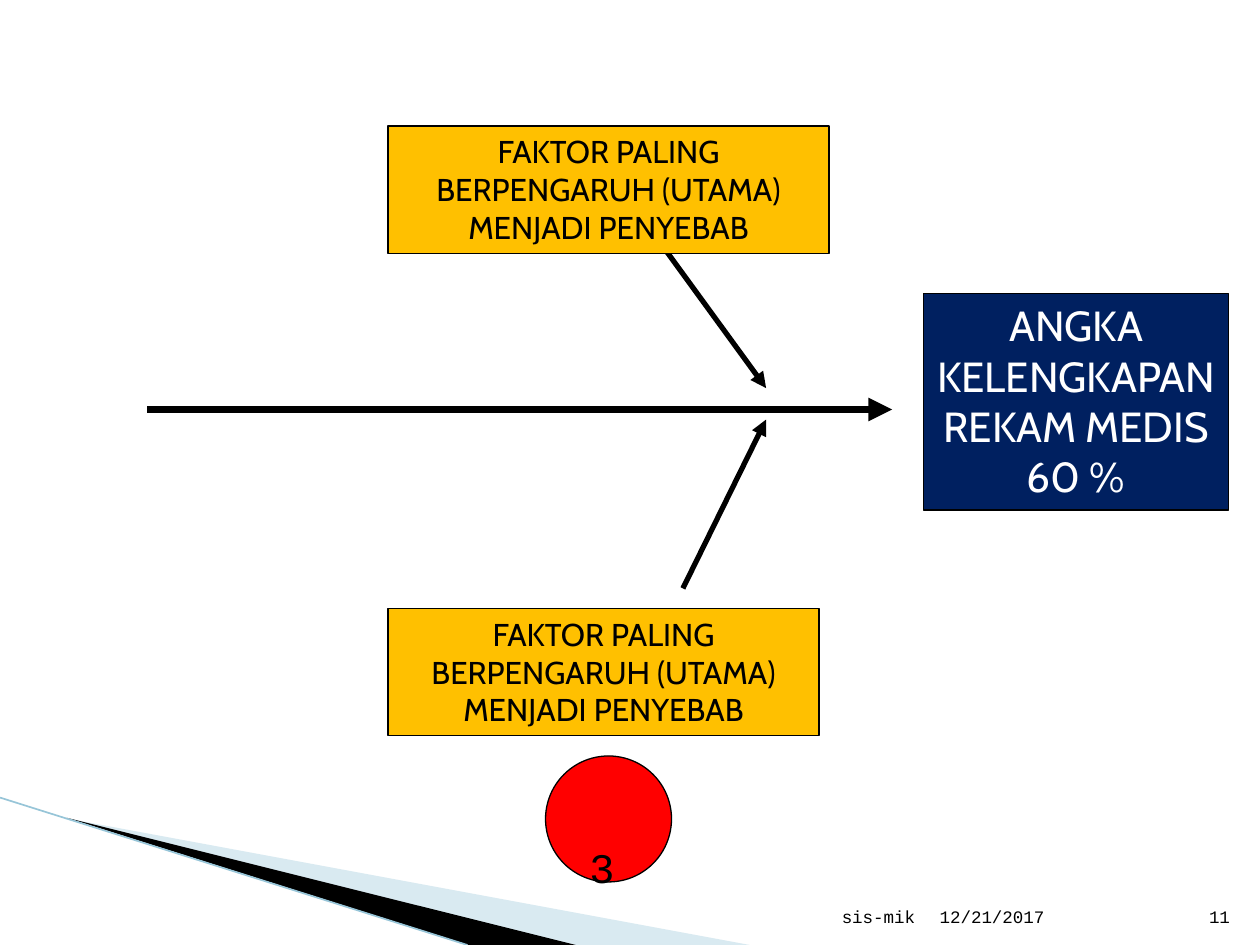
from pptx import Presentation
from pptx.dml.color import RGBColor
from pptx.enum.shapes import MSO_CONNECTOR, MSO_SHAPE
from pptx.enum.text import MSO_ANCHOR, PP_ALIGN
from pptx.oxml.ns import qn
from pptx.util import Inches, Pt
from lxml import etree

RECT, DISC = MSO_SHAPE.RECTANGLE, MSO_SHAPE.FLOWCHART_CONNECTOR
LINE = MSO_CONNECTOR.STRAIGHT
LEFT, MID, RIGHT = PP_ALIGN.LEFT, PP_ALIGN.CENTER, PP_ALIGN.RIGHT
TOP, LOW = MSO_ANCHOR.TOP, MSO_ANCHOR.BOTTOM
WIDE, HIGH = 10, 7.5
BLACK, WHITE, GOLD, NAVY, RED = "000000", "FFFFFF", "FFC000", "002060", "FF0000"
SANS, MONO = "Cabin", "Courier New"

CAUSE = "FAKTOR PALING BERPENGARUH (UTAMA) MENJADI PENYEBAB"
RESULT = "ANGKA KELENGKAPAN REKAM MEDIS 60 %"
CAUSES = [(3.08, 1, 3.5, 1.01), (3.08, 4.83, 3.42, 1.01)]
ARROWS = [
    ((1.17, 3.25), (7.08, 3.25), 4.5),
    ((5.42, 4.67), (6.08, 3.33), 3),
    ((5.17, 1.83), (6.08, 3.08), 3),
]
WEDGES = [
    ([(0.55, 6.5), (5.95, HIGH), (4.56, HIGH)], "A0CBDC", 40),
    ([(0.53, 6.49), (4.57, HIGH), (3.72, HIGH)], BLACK, 100),
]
FOOT = [("sis-mik", 2.57, RIGHT), ("12/21/2017", 2.1, LEFT), ("11", 0.4, RIGHT)]

deck = Presentation()
deck.slide_width, deck.slide_height = Inches(WIDE), Inches(HIGH)
slide = deck.slides.add_slide(deck.slide_layouts[6])
shapes = slide.shapes


def color(code):
    return RGBColor.from_string(code)


def fill(shape, code, alpha=100):
    shape.shadow.inherit = False
    shape.fill.solid()
    shape.fill.fore_color.rgb = color(code)
    if alpha < 100:
        tone = shape._element.spPr.find(".//" + qn("a:srgbClr"))
        etree.SubElement(tone, qn("a:alpha"), val=str(alpha * 1000))


def wedge(points, code, alpha):
    spots = [(Inches(x), Inches(y)) for x, y in points]
    pen = shapes.build_freeform(*spots[0])
    pen.add_line_segments(spots[1:], close=True)
    shape = pen.convert_to_shape()
    fill(shape, code, alpha)
    shape.line.fill.background()


def stroke(start, end, code, width, head=False):
    line = shapes.add_connector(LINE, *map(Inches, start + end))
    line.line.color.rgb = color(code)
    line.line.width = Pt(width)
    if head:
        etree.SubElement(line.line._get_or_add_ln(), qn("a:tailEnd"), type="triangle")
    etree.SubElement(line._element.spPr, qn("a:effectLst"))


def block(kind, place, code, width=0.75):
    shape = shapes.add_shape(kind, *map(Inches, place))
    fill(shape, code)
    shape.line.color.rgb = color(BLACK)
    shape.line.width = Pt(width)
    return shape


def write(shape, text, font=MONO, size=10, code=BLACK, align=LEFT, anchor=TOP):
    frame = shape.text_frame
    frame.word_wrap = True
    frame.vertical_anchor = anchor
    para = frame.paragraphs[0]
    para.text = text
    para.alignment = align
    para.font.name = font
    para.font.size = Pt(size)
    para.font.color.rgb = color(code)


def label(place, text, **style):
    write(shapes.add_textbox(*map(Inches, place)), text, **style)


for item in WEDGES:
    wedge(*item)
stroke((0, 6.33), (3.71, HIGH), "97C5D8", 0.95)

block(DISC, (4.33, 6, 1, 1), RED)
label((4.58, 6.63, 0.5, 0.5), "3", size=24)
for start, end, width in ARROWS:
    stroke(start, end, BLACK, width, head=True)
for place in CAUSES:
    write(block(RECT, place, GOLD), CAUSE, font=SANS, size=18, align=MID)

left = 4.79
for text, width, align in FOOT:
    label((left, 7.01, width, 0.4), text, align=align, anchor=LOW)
    left += width

goal = block(RECT, (7.33, 2.33, 2.42, 1.72), NAVY, 1)
write(goal, RESULT, font=SANS, size=24, code=WHITE, align=MID)

deck.save("out.pptx")
